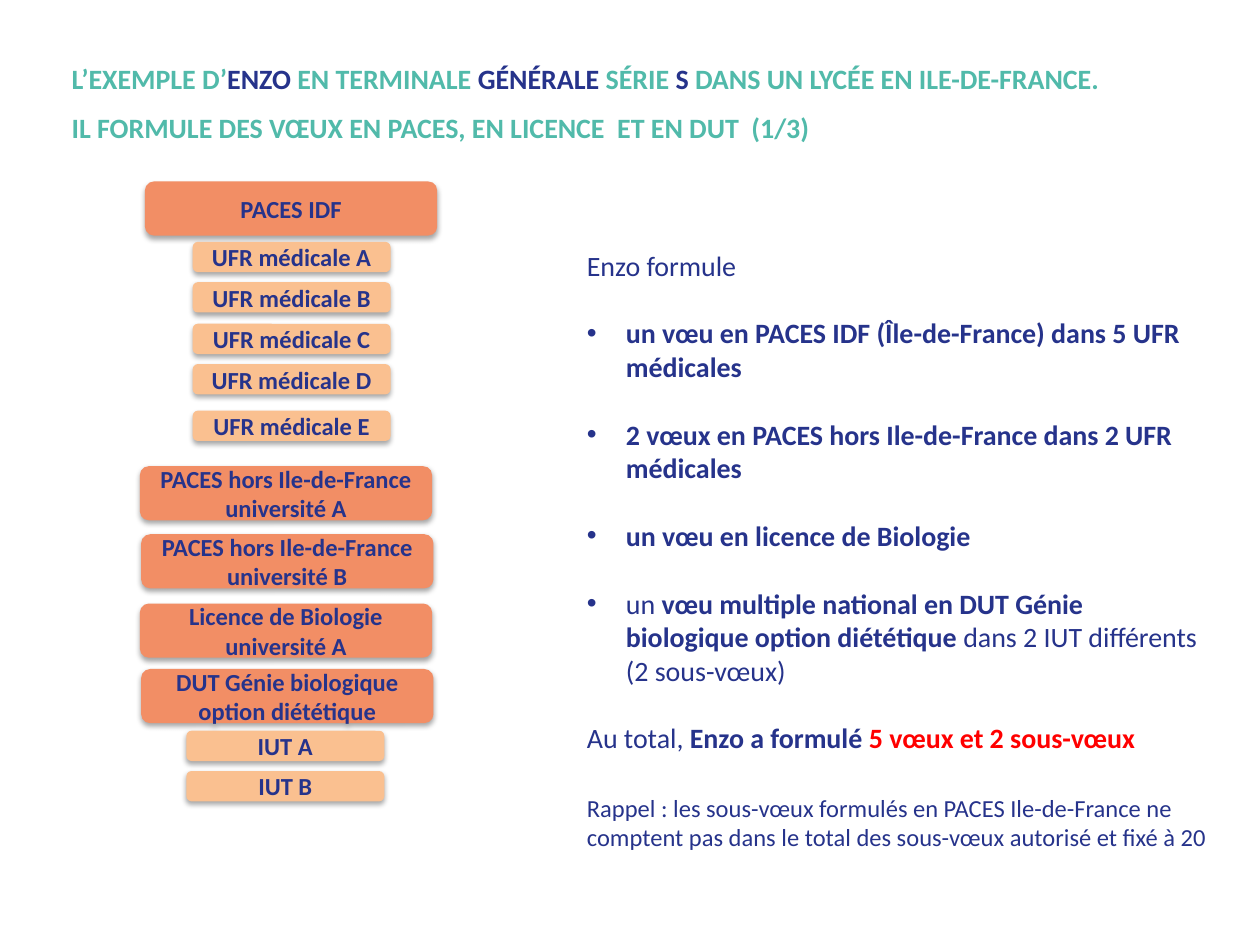
"""Build the slide on Enzo's wishes in PACES, licence and DUT."""
from lxml import etree
from pptx import Presentation
from pptx.dml.color import RGBColor
from pptx.enum.shapes import MSO_SHAPE
from pptx.enum.text import MSO_ANCHOR, PP_ALIGN
from pptx.oxml.ns import qn
from pptx.util import Inches, Pt

ROUNDED = MSO_SHAPE.ROUNDED_RECTANGLE
MIDDLE = MSO_ANCHOR.MIDDLE
CENTER = PP_ALIGN.CENTER
COLORS = {
    "teal": "51BAAA",
    "navy": "26338B",
    "red": "FF0000",
    "wish": "F28E65",
    "choice": "FAC090",
    "shadow": "000000",
}


def add_span(paragraph, text, size, color="navy", bold=False):
    span = paragraph.add_run()
    span.text = text
    for name, value in {"name": "Calibri", "size": Pt(size), "bold": bold}.items():
        setattr(span.font, name, value)
    span.font.color.rgb = RGBColor.from_string(COLORS[color])


def add_shadow(shape):
    shape.shadow.inherit = False
    effects = shape._element.spPr.find(qn("a:effectLst"))
    values = {"blurRad": Pt(3.1), "dist": Pt(1.8), "dir": 90 * 60000, "rotWithShape": 0}
    shadow = etree.SubElement(
        effects, qn("a:outerShdw"), {name: str(value) for name, value in values.items()}
    )
    color = etree.SubElement(shadow, qn("a:srgbClr"), val=COLORS["shadow"])
    etree.SubElement(color, qn("a:alpha"), val="35000")


deck = Presentation()
deck.slide_width, deck.slide_height = Inches(10), Inches(7.5)
page = deck.slides.add_slide(deck.slide_layouts[6])

title_box = page.shapes.add_textbox(Inches(0.47), Inches(0.05), Inches(9.16), Inches(1.41))
title_box.text_frame.word_wrap = True
title_box.text_frame.vertical_anchor = MIDDLE
title_lines = [
    [
        ("L’EXEMPLE D’", "teal"),
        ("ENZO", "navy"),
        (" EN TERMINALE ", "teal"),
        ("GÉNÉRALE", "navy"),
        (" SÉRIE ", "teal"),
        ("S ", "navy"),
        ("DANS UN LYCÉE EN ILE-DE-FRANCE.", "teal"),
    ],
    [("IL FORMULE DES VŒUX EN PACES, EN LICENCE  ET EN DUT  (1/3)", "teal")],
]
title = title_box.text_frame.paragraphs[0]
title.line_spacing = Pt(28)
for index, line in enumerate(title_lines):
    if index:
        title.add_line_break()
    for text, color in line:
        add_span(title, text, 16, color, True)

sizes = {"wish": (2.32, 0.43), "choice": (1.57, 0.24)}
wishes = [
    ("wish", 1.15, 1.44, "PACES IDF"),
    ("choice", 1.53, 1.92, "UFR médicale A"),
    ("choice", 1.53, 2.24, "UFR médicale B"),
    ("choice", 1.53, 2.57, "UFR médicale C"),
    ("choice", 1.53, 2.89, "UFR médicale D"),
    ("choice", 1.53, 3.26, "UFR médicale E"),
    ("wish", 1.11, 3.7, "PACES hors Ile-de-France université A"),
    ("wish", 1.12, 4.24, "PACES hors Ile-de-France université B"),
    ("wish", 1.11, 4.79, "Licence de Biologie université A"),
    ("wish", 1.12, 5.31, "DUT Génie biologique option diététique"),
    ("choice", 1.48, 5.8, "IUT A"),
    ("choice", 1.48, 6.12, "IUT B"),
]
for kind, left, top, text in wishes:
    width, height = sizes[kind]
    box = page.shapes.add_shape(
        ROUNDED, Inches(left), Inches(top), Inches(width), Inches(height)
    )
    box.fill.solid()
    box.fill.fore_color.rgb = RGBColor.from_string(COLORS[kind])
    box.line.fill.background()
    add_shadow(box)
    box.text_frame.word_wrap = True
    box.text_frame.vertical_anchor = MIDDLE
    paragraph = box.text_frame.paragraphs[0]
    paragraph.alignment = CENTER
    add_span(paragraph, text, 14, bold=True)

summary_box = page.shapes.add_textbox(Inches(4.56), Inches(1.92), Inches(5.16), Inches(4.93))
summary_box.text_frame.word_wrap = True
summary = [
    (False, 0, 16, [("Enzo formule", "navy", False)]),
    (True, 19.5, 16, [
        ("un vœu en PACES IDF (Île-de-France) dans 5 UFR médicales", "navy", True),
    ]),
    (True, 19.5, 16, [
        ("2 vœux en PACES hors Ile-de-France dans 2 UFR médicales", "navy", True),
    ]),
    (True, 19.5, 16, [("un vœu en licence de Biologie", "navy", True)]),
    (True, 19.5, 16, [
        ("un ", "navy", False),
        ("vœu multiple national en DUT Génie biologique option diététique ", "navy", True),
        ("dans 2 IUT différents (2 sous-vœux)", "navy", False),
    ]),
    (False, 19.5, 16, [
        ("Au total, ", "navy", False),
        ("Enzo a formulé ", "navy", True),
        ("5 vœux et 2 sous-vœux", "red", True),
    ]),
    (False, 22, 14, [
        ("Rappel : les sous-vœux formulés en PACES Ile-de-France ne comptent pas "
         "dans le total des sous-vœux autorisé et fixé à 20", "navy", False),
    ]),
]
for index, (bulleted, gap, size, spans) in enumerate(summary):
    frame = summary_box.text_frame
    paragraph = frame.add_paragraph() if index else frame.paragraphs[0]
    paragraph.space_before = Pt(gap)
    if bulleted:
        properties = paragraph._p.get_or_add_pPr()
        properties.set("marL", str(Inches(0.31)))
        properties.set("indent", str(-Inches(0.31)))
        etree.SubElement(properties, qn("a:buFont"), typeface="Arial")
        etree.SubElement(properties, qn("a:buChar"), char="•")
    for text, color, bold in spans:
        add_span(paragraph, text, size, color, bold)

deck.save("out.pptx")
